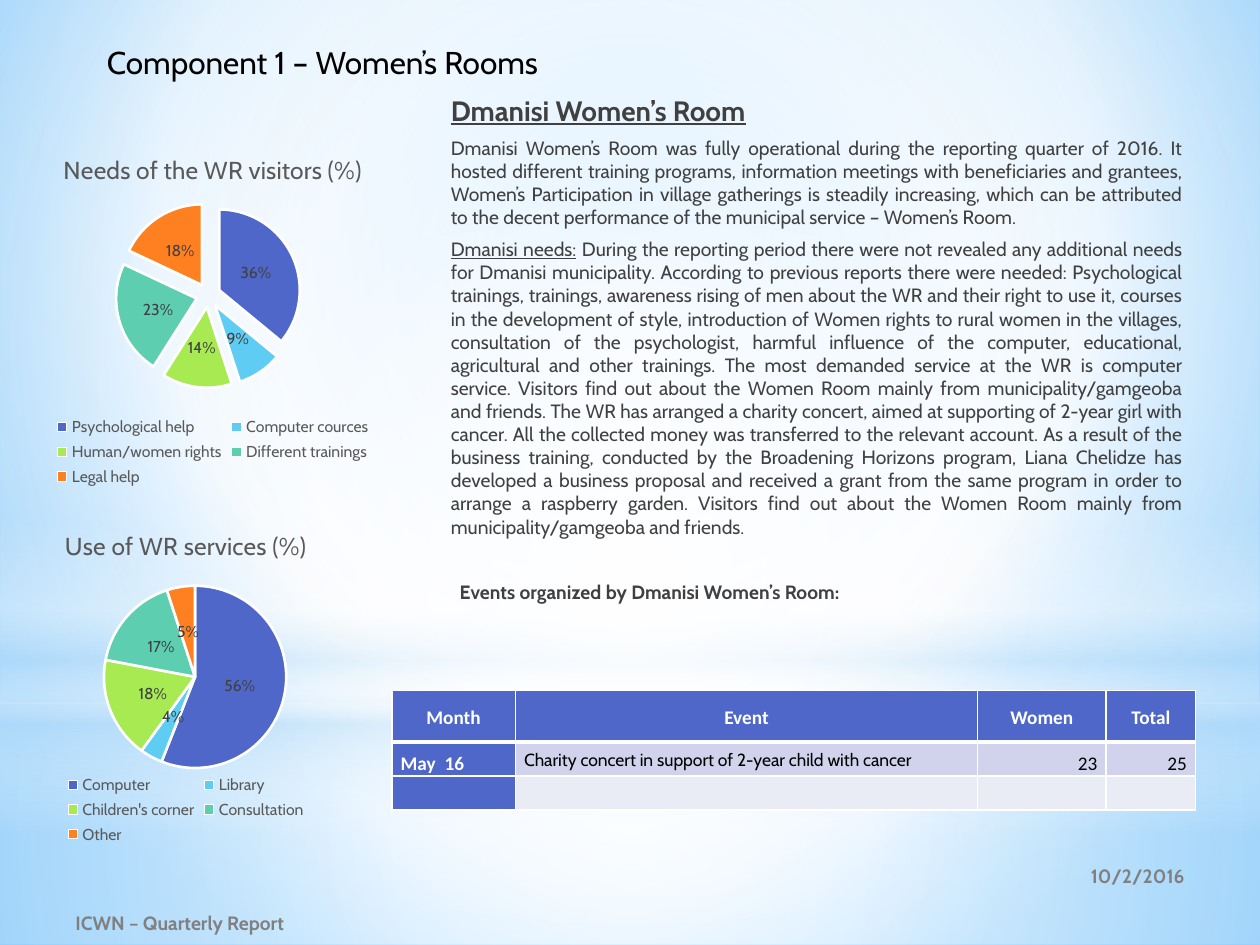
from lxml import etree
from pptx import Presentation
from pptx.chart.data import CategoryChartData
from pptx.dml.color import RGBColor
from pptx.enum.chart import XL_CHART_TYPE, XL_LABEL_POSITION, XL_LEGEND_POSITION
from pptx.enum.shapes import MSO_SHAPE
from pptx.enum.text import MSO_ANCHOR, PP_ALIGN
from pptx.oxml import parse_xml
from pptx.oxml.ns import qn
from pptx.util import Inches, Pt

PIE = XL_CHART_TYPE.PIE
LABEL_CENTER = XL_LABEL_POSITION.CENTER
LEGEND_BOTTOM = XL_LEGEND_POSITION.BOTTOM
RECTANGLE, OVAL = MSO_SHAPE.RECTANGLE, MSO_SHAPE.OVAL
TOP, MIDDLE, BOTTOM = MSO_ANCHOR.TOP, MSO_ANCHOR.MIDDLE, MSO_ANCHOR.BOTTOM
LEFT, CENTER, RIGHT, JUSTIFY = PP_ALIGN.LEFT, PP_ALIGN.CENTER, PP_ALIGN.RIGHT, PP_ALIGN.JUSTIFY

COLORS = {
    "black": "000000", "white": "FFFFFF", "body": "404040", "legend": "595959",
    "footer": "808080", "sky": "9ED5FF", "deep sky": "5BB9FF", "haze": "B4DCFA",
    "blue": "4E67C8", "cyan": "5ECCF3", "lime": "A7EA52", "teal": "5DCEAF",
    "orange": "FF8021", "band": "D0D3EB", "pale band": "E9EBF5",
}
SLICES = ["blue", "cyan", "lime", "teal", "orange"]
DRAWING = "http://schemas.openxmlformats.org/drawingml/2006/main"

INTRO = "Dmanisi Women’s Room was fully operational during the reporting quarter of 2016. It hosted different training programs, information meetings with beneficiaries and grantees, Women’s Participation in village gatherings is steadily increasing, which can be attributed to the decent performance of the municipal service – Women’s Room."
NEEDS = " During the reporting period there were not revealed any additional needs for Dmanisi municipality. According to previous reports there were needed: Psychological trainings, trainings, awareness rising of men about the WR and their right to use it, courses in the development of style, introduction of Women rights to rural women in the villages, consultation of the psychologist, harmful influence of the computer, educational, agricultural and other trainings."
SERVICES = " The most demanded service at the WR is computer service. Visitors find out about the Women Room mainly from municipality/gamgeoba and friends. The WR has arranged a charity concert, aimed at supporting of 2-year girl with cancer. All the collected money was transferred to the relevant account."
RESULTS = " As a result of the business training, conducted by the Broadening Horizons program, Liana Chelidze has developed a business proposal and received a grant from the same program in order to arrange a raspberry garden. Visitors find out about the Women Room mainly from municipality/gamgeoba and friends."


def color(name):
    """Return the named colour."""
    return RGBColor.from_string(COLORS[name])


def style_font(font, size, name, face="Cabin", bold=False, underline=False):
    """Set size, colour, face and emphasis of a font."""
    font.size, font.name, font.bold, font.underline = Pt(size), face, bold, underline
    font.color.rgb = color(name)


def add_span(para, text, *style, **emphasis):
    """Add one styled run to a paragraph."""
    span = para.add_run()
    span.text = text
    style_font(span.font, *style, **emphasis)


def set_gradient(parent, stops, focus=None):
    """Replace a solid fill by a circular gradient, or a vertical one without focus."""
    listed = "".join(
        f'<a:gs pos="{place * 1000}"><a:srgbClr val="{COLORS[name]}">'
        f'<a:alpha val="{opacity * 1000}"/></a:srgbClr></a:gs>'
        for place, name, opacity in stops)
    if focus:
        sides = " ".join(f'{side}="{share * 1000}"' for side, share in zip("ltrb", focus))
        direction = f'<a:path path="circle"><a:fillToRect {sides}/></a:path>'
    else:
        direction = '<a:lin ang="5400000" scaled="0"/>'
    gradient = parse_xml(f'<a:gradFill xmlns:a="{DRAWING}" rotWithShape="1">'
                         f'<a:gsLst>{listed}</a:gsLst>{direction}</a:gradFill>')
    parent.replace(parent.find(qn("a:solidFill")), gradient)


def add_backdrop(page):
    """Fill the page and lay the translucent glows over it."""
    page.background.fill.solid()
    page.background.fill.fore_color.rgb = color("white")
    set_gradient(page._element.find(".//" + qn("p:bgPr")),
                 [(0, "sky", 100), (60, "white", 100), (100, "deep sky", 100)], (20, 10, 20, 60))
    middle = (50, 50, 50, 50)
    glows = [
        (RECTANGLE, 5.58, 1.92, [(0, "white", 91), (37, "white", 76), (100, "haze", 79)], middle),
        (RECTANGLE, 0, 5.58, [(0, "white", 89), (48, "white", 62), (100, "haze", 79)], middle),
        (RECTANGLE, 4.12, 2.5, [(0, "white", 0), (29, "white", 30), (45, "haze", 40),
                                (55, "white", 26), (65, "haze", 60), (100, "white", 0)], None),
        (OVAL, 1.75, 5.58, [(0, "white", 100), (56, "white", 0)], middle),
    ]
    for kind, top, height, stops, focus in glows:
        glow = page.shapes.add_shape(kind, 0, Inches(top), Inches(10), Inches(height))
        glow.shadow.inherit = False
        glow.line.fill.background()
        glow.fill.solid()
        set_gradient(glow._element.spPr, stops, focus)


def add_text_frame(page, box, anchor=TOP, wrap=True):
    """Add a text box and return its frame."""
    frame = page.shapes.add_textbox(*map(Inches, box)).text_frame
    frame.word_wrap, frame.vertical_anchor = wrap, anchor
    return frame


def add_line(page, box, text, size, name, align=LEFT, anchor=MIDDLE, wrap=True, bold=True):
    """Add a text box holding one line."""
    para = add_text_frame(page, box, anchor, wrap).paragraphs[0]
    para.alignment = align
    add_span(para, text, size, name, bold=bold)


def add_story(page, box):
    """Add the heading, the two body paragraphs and the events line."""
    frame = add_text_frame(page, box)
    needs = [(text, 11, False, False) for text in (NEEDS, SERVICES, RESULTS)]
    story = [
        (LEFT, 0.05, 3.2, [("Dmanisi Women’s Room", 16, True, True)]),
        (JUSTIFY, 0.05, 2.2, [(INTRO, 11, False, False)]),
        (JUSTIFY, 0.05, 2.2, [("Dmanisi needs:", 11, False, True), *needs]),
        (JUSTIFY, 0.12, 21, [("Events organized by Dmanisi Women’s Room:", 11, True, False)]),
    ]
    for index, (align, indent, before, spans) in enumerate(story):
        para = frame.add_paragraph() if index else frame.paragraphs[0]
        para.alignment, para.space_before, para.space_after = align, Pt(before), Pt(3)
        para._p.get_or_add_pPr().set("marL", str(Inches(indent)))
        for text, size, bold, underline in spans:
            add_span(para, text, size, "body", bold=bold, underline=underline)


def set_borders(cell, bottom):
    """Draw white cell borders, with the given bottom width in points."""
    properties = cell._tc.get_or_add_tcPr()
    for index, (side, width) in enumerate(zip("LRTB", (1, 1, 1, bottom))):
        properties.insert(index, parse_xml(
            f'<a:ln{side} xmlns:a="{DRAWING}" w="{Pt(width)}"><a:solidFill>'
            f'<a:srgbClr val="{COLORS["white"]}"/></a:solidFill></a:ln{side}>'))


def add_events_table(page, box):
    """Add the table of events."""
    rows = [["Month", "Event", "Women", "Total"],
            ["May  16", "Charity concert in support of 2-year child with cancer", "23", "25"],
            [""] * 4]
    table = page.shapes.add_table(3, 4, *map(Inches, box)).table
    for column, width in zip(table.columns, (0.98, 3.67, 1.02, 0.71)):
        column.width = Inches(width)
    for row, height in zip(table.rows, (0.41, 0.27, 0.27)):
        row.height = Inches(height)
    for r, texts in enumerate(rows):
        for c, text in enumerate(texts):
            cell = table.cell(r, c)
            cell.margin_left = cell.margin_right = Inches(0.07)
            cell.margin_top = cell.margin_bottom = 0
            strong, event = r == 0 or c == 0, r == 1 and c == 1
            cell.vertical_anchor = MIDDLE if r == 0 or event else BOTTOM
            cell.fill.solid()
            cell.fill.fore_color.rgb = color("blue" if strong else ("band", "pale band")[r - 1])
            set_borders(cell, 1 if r else 3)
            para = cell.text_frame.paragraphs[0]
            if not text:
                etree.SubElement(para._p, qn("a:endParaRPr")).set("sz", "1100")
                continue
            para.line_spacing = 1.15
            para.alignment = CENTER if r == 0 else RIGHT if c > 1 else LEFT
            add_span(para, text, 10 if event else 11, "white" if strong else "black",
                     "Cabin" if event else "Calibri", bold=strong)


def add_pie(page, box, title, shares, plot, explosion=0):
    """Add a pie chart with percent labels and a legend below."""
    data = CategoryChartData()
    data.categories = list(shares)
    data.add_series("Series 1", list(shares.values()))
    chart = page.shapes.add_chart(PIE, *map(Inches, box), data).chart
    style_font(chart.font, 10, "black")
    chart.has_title = True
    add_span(chart.chart_title.text_frame.paragraphs[0], title, 14, "legend")
    chart.has_legend = True
    chart.legend.position, chart.legend.include_in_layout = LEGEND_BOTTOM, False
    style_font(chart.legend.font, 9, "legend")
    pie = chart.plots[0]
    pie.vary_by_categories = True
    series = pie.series[0]
    for index, name in enumerate(SLICES):
        part = series.points[index].format
        part.fill.solid()
        part.fill.fore_color.rgb = color(name)
        part.line.color.rgb = color("white")
        part.line.width = Pt(1.5)
    if explosion:
        burst = etree.Element(qn("c:explosion"), val=str(explosion))
        series._element.find(qn("c:dPt")).addprevious(burst)
    labels = series.data_labels
    labels.show_percentage, labels.show_value = True, False
    labels.number_format, labels.number_format_is_linked = "0%", False
    labels.position = LABEL_CENTER
    style_font(labels.font, 9, "body")
    area = chart._chartSpace.find(".//" + qn("c:plotArea"))
    for old in area.findall(qn("c:layout")):
        area.remove(old)
    layout = etree.Element(qn("c:layout"))
    manual = etree.SubElement(layout, qn("c:manualLayout"))
    settings = [("layoutTarget", "inner"), ("xMode", "edge"), ("yMode", "edge"), *zip("xywh", plot)]
    for tag, value in settings:
        etree.SubElement(manual, qn("c:" + tag)).set("val", str(value))
    area.insert(0, layout)


def main():
    """Build the deck and save it."""
    deck = Presentation()
    deck.slide_width, deck.slide_height = Inches(10), Inches(7.5)
    page = deck.slides.add_slide(deck.slide_layouts[6])
    add_backdrop(page)
    add_story(page, (3.43, 0.69, 6.06, 4.72))
    add_line(page, (0.5, 7.15, 3.67, 0.35), "ICWN – Quarterly Report", 11, "footer")
    add_line(page, (0.75, 0.29, 3.74, 0.4), "Component 1 – Women’s Rooms", 18, "black",
             anchor=TOP, wrap=False, bold=False)
    add_events_table(page, (3.11, 5.48, 6.38, 0.95))
    add_pie(page, (-0.12, 1.07, 3.62, 2.83), "Needs of the WR visitors (%)",
            {"Psychological help": 36, "Computer cources": 9, "Human/women rights": 14,
             "Different trainings": 23, "Legal help": 18}, (0.04, 0.19, 0.9, 0.52), 15)
    add_pie(page, (0, 4.06, 2.95, 2.68), "Use of WR services (%)",
            {"Computer": 56, "Library": 4, "Children's corner": 18,
             "Consultation": 17, "Other": 5}, (0.05, 0.22, 0.95, 0.54))
    add_line(page, (6.75, 6.75, 2.75, 0.4), "10/2/2016", 11, "footer", align=RIGHT)
    deck.save("out.pptx")


if __name__ == "__main__":
    main()
